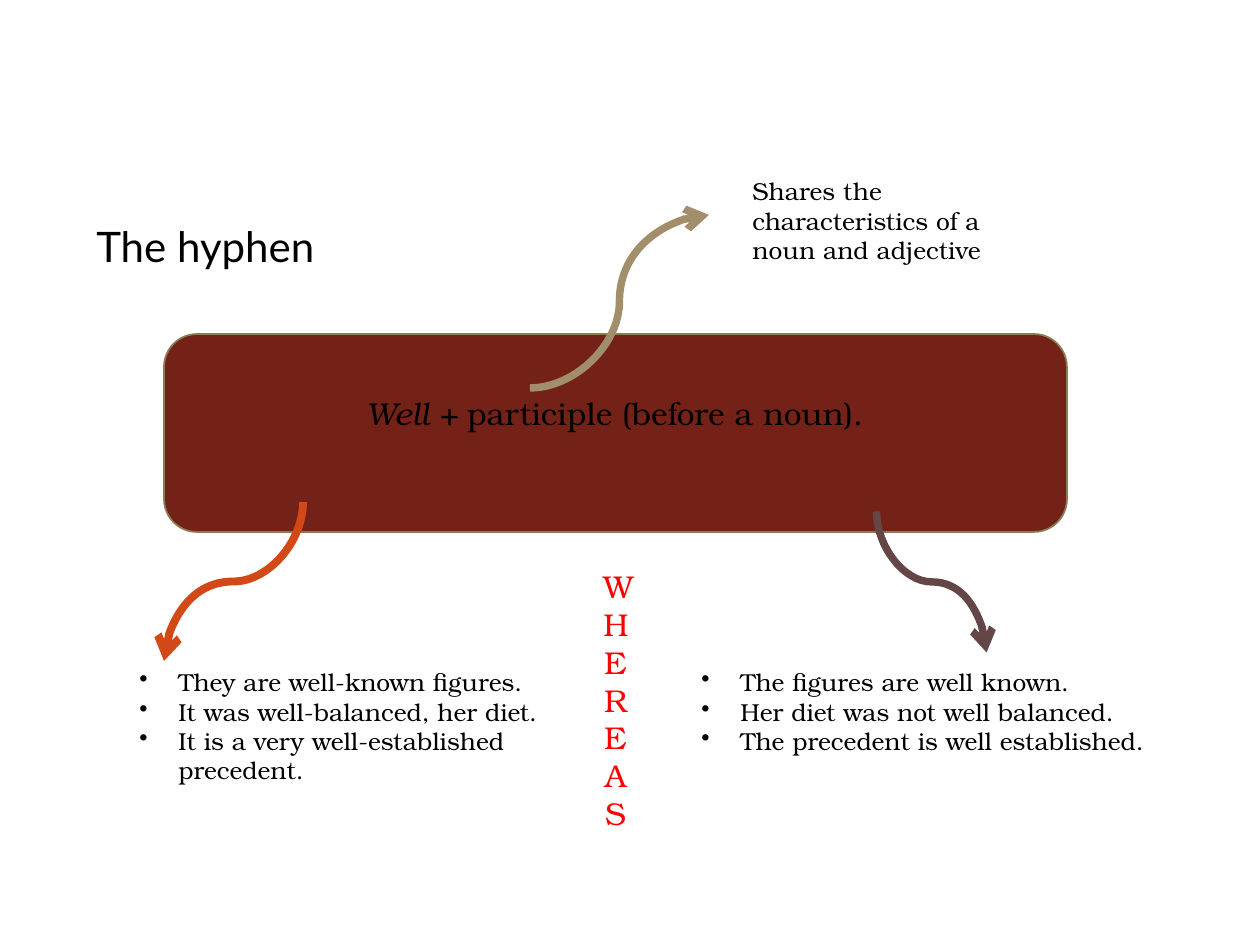
from dataclasses import dataclass

from pptx import Presentation
from pptx.dml.color import RGBColor
from pptx.enum.shapes import MSO_CONNECTOR as Connector, MSO_SHAPE as Preset
from pptx.enum.text import MSO_AUTO_SIZE as AutoSize, PP_ALIGN as Align
from pptx.oxml.ns import qn
from pptx.slide import Slide
from pptx.util import Emu, Pt

BLACK = RGBColor(0x00, 0x00, 0x00)
RED = RGBColor(0xFF, 0x00, 0x00)
MAROON = RGBColor(0x74, 0x22, 0x17)
OLIVE = RGBColor(0x8B, 0x7B, 0x57)
ORANGE = RGBColor(0xD3, 0x48, 0x17)
TAN = RGBColor(0xA2, 0x8E, 0x6A)
PLUM = RGBColor(0x64, 0x46, 0x46)

SANS = "Lato"
SERIF = "TeX Gyre Bonum"
PIXELS_PER_INCH = 126
BULLET_INDENT = 39
LIST_TOP = 661
LIST_WIDTH = 515
LIST_HEIGHT = 102


@dataclass(frozen=True)
class Run:
    text: str
    italic: bool = False


@dataclass(frozen=True)
class TextBlock:
    left: int
    top: int
    width: int
    height: int
    paragraphs: list[list[Run]]
    size: int = 14
    font: str = SERIF
    color: RGBColor = BLACK
    align: Align = Align.LEFT
    bulleted: bool = False


@dataclass(frozen=True)
class CurvedArrow:
    begin: tuple[int, int]
    end: tuple[int, int]
    color: RGBColor
    weight: float
    rotation: int = 0


def px(value: int) -> Emu:
    return Emu(round(value * 914400 / PIXELS_PER_INCH))


def plain(*lines: str) -> list[list[Run]]:
    return [[Run(line)] for line in lines]


def add_bullet(paragraph) -> None:
    properties = paragraph._p.get_or_add_pPr()
    properties.set("marL", str(px(BULLET_INDENT)))
    properties.set("indent", str(-px(BULLET_INDENT)))
    bullet = properties.makeelement(qn("a:buChar"), {"char": "•"})
    properties.append(bullet)


def draw_text(slide: Slide, block: TextBlock) -> None:
    box = slide.shapes.add_textbox(
        px(block.left), px(block.top), px(block.width), px(block.height)
    )
    frame = box.text_frame
    frame.word_wrap = True
    frame.auto_size = AutoSize.SHAPE_TO_FIT_TEXT
    for index, runs in enumerate(block.paragraphs):
        paragraph = frame.add_paragraph() if index else frame.paragraphs[0]
        paragraph.alignment = block.align
        if block.bulleted:
            add_bullet(paragraph)
        for item in runs:
            run = paragraph.add_run()
            run.text = item.text
            run.font.name = block.font
            run.font.size = Pt(block.size)
            run.font.italic = item.italic
            run.font.color.rgb = block.color


def draw_arrow(slide: Slide, arrow: CurvedArrow) -> None:
    connector = slide.shapes.add_connector(
        Connector.CURVE, *map(px, arrow.begin + arrow.end)
    )
    connector.line.color.rgb = arrow.color
    connector.line.width = Pt(arrow.weight)
    properties = connector._element.spPr
    if arrow.rotation:
        properties.find(qn("a:xfrm")).set("rot", str(arrow.rotation * 60000))
    line = properties.find(qn("a:ln"))
    line.append(line.makeelement(qn("a:tailEnd"), {"type": "arrow"}))
    properties.append(properties.makeelement(qn("a:effectLst"), {}))


def draw_panel(slide: Slide) -> None:
    panel = slide.shapes.add_shape(
        Preset.ROUNDED_RECTANGLE, px(164), px(334), px(903), px(198)
    )
    panel.shadow.inherit = False
    panel.fill.solid()
    panel.fill.fore_color.rgb = MAROON
    panel.line.color.rgb = OLIVE
    panel.line.width = Pt(1)


TITLE = TextBlock(84, 214, 1081, 63, plain("The hyphen"), size=24, font=SANS)
RULE = TextBlock(
    228, 388, 774, 50,
    [[Run("Well + ", italic=True), Run("participle (before a noun).")]],
    size=18, align=Align.CENTER,
)
HYPHENATED = TextBlock(
    127, LIST_TOP, LIST_WIDTH, LIST_HEIGHT,
    plain(
        "They are well-known figures.",
        "It was well-balanced, her diet.",
        "It is a very well-established precedent.",
    ),
    bulleted=True,
)
PARTICIPLE_NOTE = TextBlock(
    740, 170, 307, 72,
    plain("Shares the characteristics of a noun and adjective"),
)
WHEREAS = TextBlock(
    591, 561, 49, 280, plain("W", "H", "E", "RE", "AS"),
    size=18, color=RED, align=Align.CENTER,
)
UNHYPHENATED = TextBlock(
    689, LIST_TOP, LIST_WIDTH, LIST_HEIGHT,
    plain(
        "The figures are well known.",
        "Her diet was not well balanced.",
        "The precedent is well established.",
    ),
    bulleted=True,
)

TO_HYPHENATED = CurvedArrow((154, 512), (313, 651), ORANGE, 4.5, rotation=90)
TO_NOTE = CurvedArrow((530, 388), (709, 215), TAN, 4.25)
TO_UNHYPHENATED = CurvedArrow((1002, 527), (861, 637), PLUM, 4.25, rotation=270)


def main() -> None:
    presentation = Presentation()
    presentation.slide_width = px(1260)
    presentation.slide_height = px(945)
    slide = presentation.slides.add_slide(presentation.slide_layouts[6])
    draw_text(slide, TITLE)
    draw_panel(slide)
    draw_text(slide, RULE)
    for arrow, block in (
        (TO_HYPHENATED, HYPHENATED),
        (TO_NOTE, PARTICIPLE_NOTE),
        (TO_UNHYPHENATED, WHEREAS),
    ):
        draw_arrow(slide, arrow)
        draw_text(slide, block)
    draw_text(slide, UNHYPHENATED)
    presentation.save("out.pptx")


if __name__ == "__main__":
    main()
